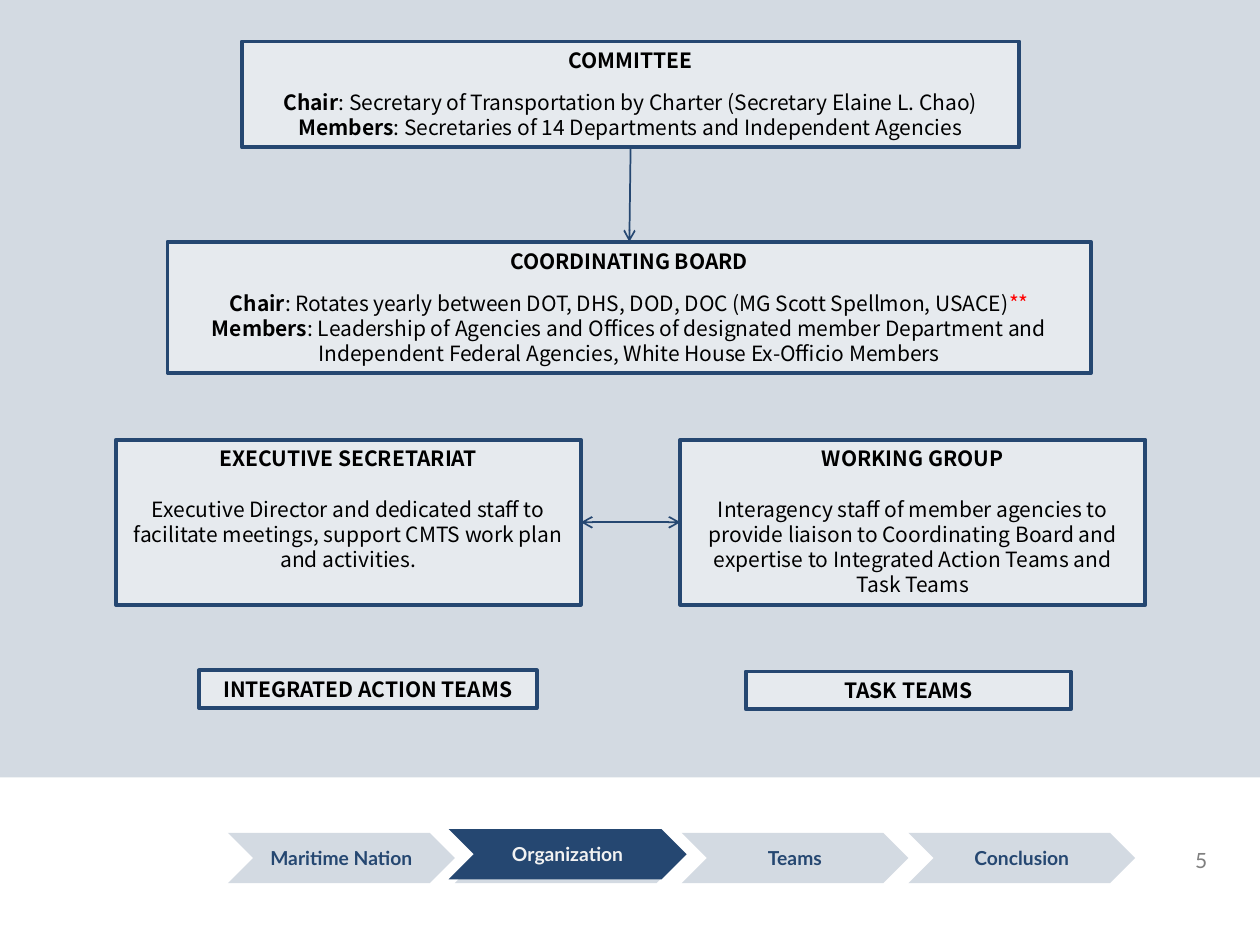
"""Build the committee organization slide with its chevron navigation."""
from dataclasses import dataclass

from lxml import etree
from pptx import Presentation
from pptx.dml.color import RGBColor
from pptx.enum.shapes import MSO_CONNECTOR, MSO_SHAPE
from pptx.enum.text import MSO_ANCHOR, PP_ALIGN
from pptx.oxml.ns import qn
from pptx.util import Inches, Pt

RECTANGLE, CHEVRON = MSO_SHAPE.RECTANGLE, MSO_SHAPE.CHEVRON
STRAIGHT = MSO_CONNECTOR.STRAIGHT
TOP, MIDDLE = MSO_ANCHOR.TOP, MSO_ANCHOR.MIDDLE
CENTER, RIGHT = PP_ALIGN.CENTER, PP_ALIGN.RIGHT
TOP_SIDE, LEFT_SIDE, BOTTOM_SIDE, RIGHT_SIDE = range(4)


@dataclass(frozen=True)
class Theme:
    """Colours, fonts and type sizes of the slide."""
    navy: str = "254771"
    mist: str = "D3DAE2"
    panel: str = "E6EAEE"
    white: str = "FFFFFF"
    pale: str = "F2F2F2"
    black: str = "000000"
    red: str = "FF0000"
    gray: str = "808080"
    body_font: str = "Noto Sans CJK TC"
    nav_font: str = "Lato"
    body_size: int = 12
    nav_size: int = 11
    border: float = 2.25
    arrow: float = 1


THEME = Theme()
BOLD, PLAIN, ALERT = (True, THEME.black), (False, THEME.black), (False, THEME.red)

BODIES = {
    "committee": {
        "at": (1.92, 0.33, 6.17, 0.84), "title": "COMMITTEE", "gap": 9.6,
        "lines": [
            [("Chair", BOLD),
             (": Secretary of Transportation by Charter (Secretary Elaine L. Chao)", PLAIN)],
            [("Members", BOLD),
             (": Secretaries of 14 Departments and Independent Agencies", PLAIN)],
        ]},
    "board": {
        "at": (1.33, 1.92, 7.33, 1.04), "title": "COORDINATING BOARD", "gap": 9.6,
        "lines": [
            [("Chair", BOLD),
             (": Rotates yearly between DOT, DHS, DOD, DOC (MG Scott Spellmon, USACE)", PLAIN),
             ("**", ALERT)],
            [("Members", BOLD),
             (": Leadership of Agencies and Offices of designated member Department and "
              "Independent Federal Agencies, White House Ex-Officio Members", PLAIN)],
        ]},
    "secretariat": {
        "at": (0.92, 3.49, 3.69, 1.31), "title": "EXECUTIVE SECRETARIAT", "gap": 14.4,
        "lines": [
            [("Executive Director and dedicated staff to facilitate meetings, "
              "support CMTS work plan and activities.", PLAIN)],
        ]},
    "working group": {
        "at": (5.4, 3.49, 3.69, 1.31), "title": "WORKING GROUP", "gap": 14.4,
        "lines": [
            [("Interagency staff of member agencies to provide liaison to Coordinating Board "
              "and expertise to Integrated Action Teams and Task Teams", PLAIN)],
        ]},
    "action teams": {
        "at": (1.58, 5.32, 2.68, 0.3), "title": "INTEGRATED ACTION TEAMS", "gap": 0, "lines": []},
    "task teams": {
        "at": (5.92, 5.33, 2.58, 0.3), "title": "TASK TEAMS", "gap": 0, "lines": []},
}
LINKS = [
    ("committee", BOTTOM_SIDE, "board", TOP_SIDE, ("tailEnd",)),
    ("working group", LEFT_SIDE, "secretariat", RIGHT_SIDE, ("headEnd", "tailEnd")),
]
SECTIONS = ["Maritime Nation", "Organization", "Teams", "Conclusion"]
CURRENT_SECTION = "Organization"
NAV_LEFT, NAV_TOP, NAV_STEP, NAV_HEIGHT = 1.81, 6.61, 1.8, 0.4
CURRENT_AT = (3.56, 6.58, 1.89, NAV_HEIGHT)
FOOTER_AT = (0, 6.17, 10, 1.33)
PAGE_NUMBER, PAGE_NUMBER_AT = "5", (7.35, 6.68, 2.33, 0.4)


def color(code):
    """Turn a hex code into a colour."""
    return RGBColor.from_string(code)


def add_panel(slide, preset, at, fill, border=None):
    """Add a flat filled shape, outlined only when a border colour is given."""
    panel = slide.shapes.add_shape(preset, *map(Inches, at))
    panel.shadow.inherit = False
    panel.fill.solid()
    panel.fill.fore_color.rgb = color(fill)
    if border:
        panel.line.color.rgb = color(border)
        panel.line.width = Pt(THEME.border)
    else:
        panel.line.fill.background()
    return panel


def style(run, font_name, size, code, bold):
    """Apply type settings to a run."""
    run.font.name, run.font.size, run.font.bold = font_name, Pt(size), bold
    run.font.color.rgb = color(code)


def write_label(shape, label, size, code, bold, align):
    """Write a single line in the navigation font."""
    paragraph = shape.text_frame.paragraphs[0]
    paragraph.text, paragraph.alignment = label, align
    style(paragraph.runs[0], THEME.nav_font, size, code, bold)


def add_body(slide, body):
    """Add an organization box with its title and description."""
    box = add_panel(slide, RECTANGLE, body["at"], THEME.panel, THEME.navy)
    frame = box.text_frame
    frame.word_wrap, frame.vertical_anchor = True, TOP
    for index, line in enumerate([[(body["title"], BOLD)]] + body["lines"]):
        paragraph = frame.add_paragraph() if index else frame.paragraphs[0]
        paragraph.alignment = CENTER
        if index == 1:
            paragraph.space_before = Pt(body["gap"])
        for words, (bold, code) in line:
            run = paragraph.add_run()
            run.text = words
            style(run, THEME.body_font, THEME.body_size, code, bold)
    return box


def add_link(slide, start, start_side, end, end_side, arrow_ends):
    """Join two boxes with an arrow."""
    link = slide.shapes.add_connector(STRAIGHT, 0, 0, 0, 0)
    link.begin_connect(start, start_side)
    link.end_connect(end, end_side)
    link.line.color.rgb = color(THEME.navy)
    link.line.width = Pt(THEME.arrow)
    for arrow_end in arrow_ends:
        etree.SubElement(link.line._get_or_add_ln(), qn(f"a:{arrow_end}"), type="arrow")
    etree.SubElement(link._element.spPr, qn("a:effectLst"))


def add_section(slide, at, fill, label, code):
    """Add a navigation chevron with its label."""
    chevron = add_panel(slide, CHEVRON, at, fill)
    chevron.text_frame.vertical_anchor = MIDDLE
    write_label(chevron, label, THEME.nav_size, code, True, CENTER)


def main():
    """Assemble and save the slide."""
    deck = Presentation()
    deck.slide_width, deck.slide_height = Inches(10), Inches(7.5)
    slide = deck.slides.add_slide(deck.slide_layouts[6])
    slide.background.fill.solid()
    slide.background.fill.fore_color.rgb = color(THEME.mist)

    add_panel(slide, RECTANGLE, FOOTER_AT, THEME.white)
    for index, section in enumerate(SECTIONS):
        at = (NAV_LEFT + index * NAV_STEP, NAV_TOP, NAV_STEP, NAV_HEIGHT)
        if section == CURRENT_SECTION:
            add_panel(slide, CHEVRON, at, THEME.mist)
        else:
            add_section(slide, at, THEME.mist, section, THEME.navy)
    add_section(slide, CURRENT_AT, THEME.navy, CURRENT_SECTION, THEME.pale)

    boxes = {name: add_body(slide, body) for name, body in BODIES.items()}
    for start, start_side, end, end_side, arrow_ends in LINKS:
        add_link(slide, boxes[start], start_side, boxes[end], end_side, arrow_ends)

    page_number = slide.shapes.add_textbox(*map(Inches, PAGE_NUMBER_AT))
    page_number.text_frame.word_wrap = True
    write_label(page_number, PAGE_NUMBER, THEME.body_size, THEME.gray, False, RIGHT)
    deck.save("out.pptx")


if __name__ == "__main__":
    main()
